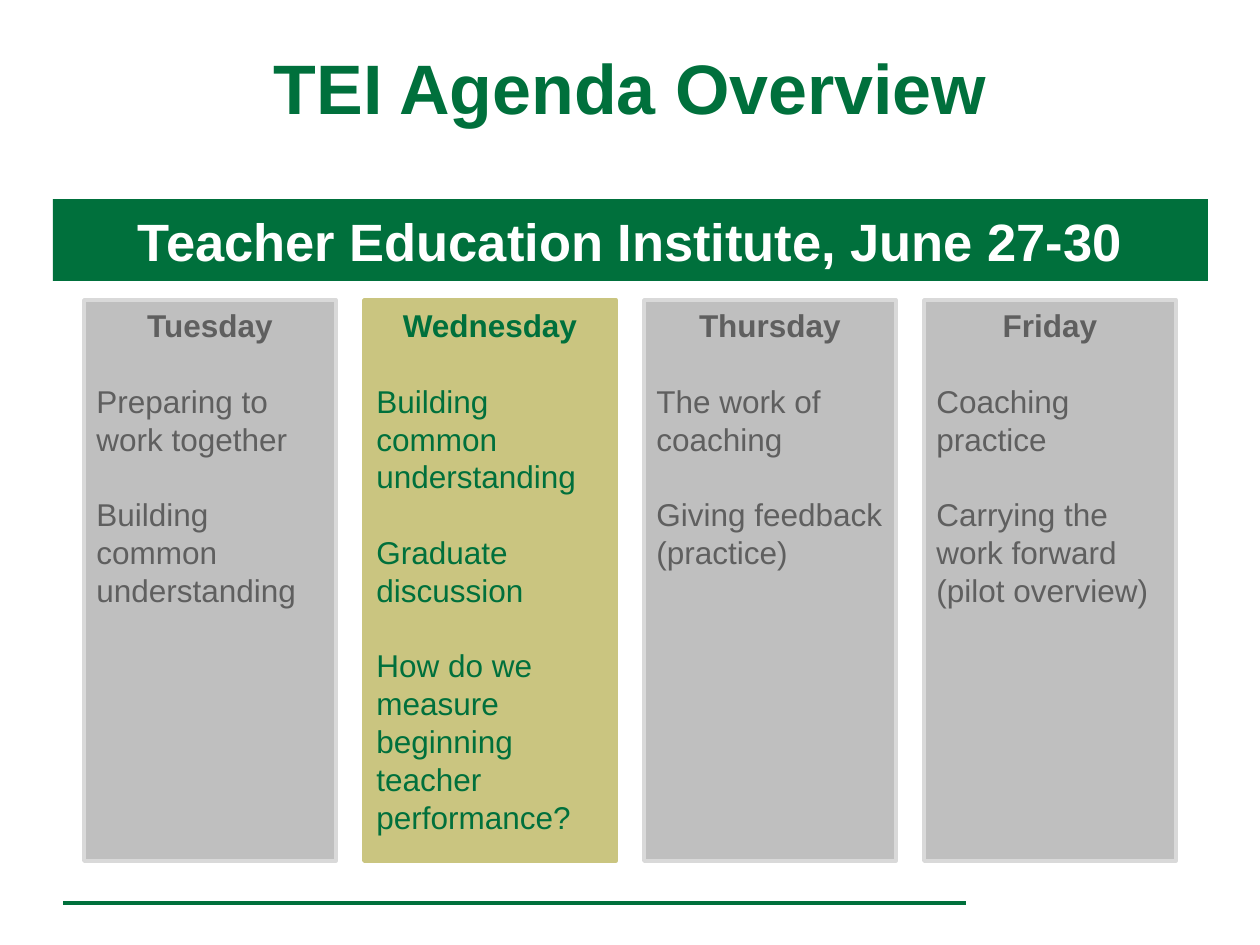
from pptx import Presentation
from pptx.dml.color import RGBColor as RGB
from pptx.enum.shapes import MSO_CONNECTOR as Conn, MSO_SHAPE as Shape
from pptx.enum.text import MSO_ANCHOR as Anchor, MSO_AUTO_SIZE as Fit, PP_ALIGN as Align
from pptx.oxml.ns import qn
from pptx.util import Emu, Pt
from lxml.etree import SubElement

GREEN = RGB(0x00, 0x70, 0x3C)
GOLD = RGB(0xCA, 0xC5, 0x80)
GRAY = RGB(0xBF, 0xBF, 0xBF)
EDGE = RGB(0xD9, 0xD9, 0xD9)
DIM = RGB(0x5F, 0x5F, 0x5F)
WHITE = RGB(0xFF, 0xFF, 0xFF)

DAYS = [
    ("Tuesday", ["Preparing to work together", "Building common understanding"]),
    ("Wednesday", ["Building common understanding", "Graduate discussion",
                   "How do we measure beginning teacher performance?"]),
    ("Thursday", ["The work of coaching", "Giving feedback (practice)"]),
    ("Friday", ["Coaching practice", "Carrying the work forward (pilot overview)"]),
]
TODAY = "Wednesday"


def px(n):
    return Emu(round(n * 914400 / 126))


class Deck:
    font = "Arial"
    pitch = Pt(21.6)

    def __init__(self):
        self.prs = Presentation()
        self.prs.slide_width, self.prs.slide_height = px(1260), px(945)
        self.slide = self.prs.slides.add_slide(self.prs.slide_layouts[5])

    def style(self, para, size, color, bold, align):
        para.alignment = align
        for run in para.runs:
            font = run.font
            font.name, font.size, font.bold = self.font, Pt(size), bold
            font.color.rgb = color

    def title(self, text, x, y, w, h):
        box = self.slide.shapes.title
        box.left, box.top, box.width, box.height = map(px, (x, y, w, h))
        frame = box.text_frame
        frame.text = text
        frame.auto_size = Fit.NONE
        frame.vertical_anchor = Anchor.TOP
        self.style(frame.paragraphs[0], 40, GREEN, True, Align.CENTER)

    def rule(self, x, y, end):
        line = self.slide.shapes.add_connector(
            Conn.STRAIGHT, px(x), px(y), px(end), px(y))
        line.line.color.rgb = GREEN
        line.line.width = Pt(2.5)
        SubElement(line._element.spPr, qn("a:effectLst"))

    def rect(self, x, y, w, h, fill, edge=None):
        box = self.slide.shapes.add_shape(Shape.RECTANGLE, *map(px, (x, y, w, h)))
        box.shadow.inherit = False
        box.fill.solid()
        box.fill.fore_color.rgb = fill
        if edge is None:
            box.line.fill.background()
        else:
            box.line.color.rgb = edge
            box.line.width = Pt(2)
        box.text_frame.word_wrap = True
        return box.text_frame

    def banner(self, text, x, y, w, h):
        frame = self.rect(x, y, w, h, GREEN)
        frame.text = text
        frame.vertical_anchor = Anchor.MIDDLE
        self.style(frame.paragraphs[0], 30, WHITE, True, Align.CENTER)

    def day(self, name, items, x, y, w, h):
        now = name == TODAY
        fill, edge, ink = (GOLD, GOLD, GREEN) if now else (GRAY, EDGE, DIM)
        frame = self.rect(x, y, w, h, fill, edge)
        frame.vertical_anchor = Anchor.TOP
        frame.text = "\n".join([name, *items])
        for i, para in enumerate(frame.paragraphs):
            head = i == 0
            self.style(para, 18, ink, head, Align.CENTER if head else Align.LEFT)
            para.line_spacing = self.pitch
            if not head:
                para.space_before = self.pitch


def main():
    deck = Deck()

    # Footer rule and title
    deck.rule(63, 903, 966)
    deck.title("TEI Agenda Overview", 0, 38, 1260, 157)

    # One column per day
    for i, (name, items) in enumerate(DAYS):
        deck.day(name, items, 84 + 280 * i, 300, 252, 561)

    # Banner above the columns
    deck.banner("Teacher Education Institute, June 27-30", 53, 199, 1155, 82)

    deck.prs.save("out.pptx")


if __name__ == "__main__":
    main()
